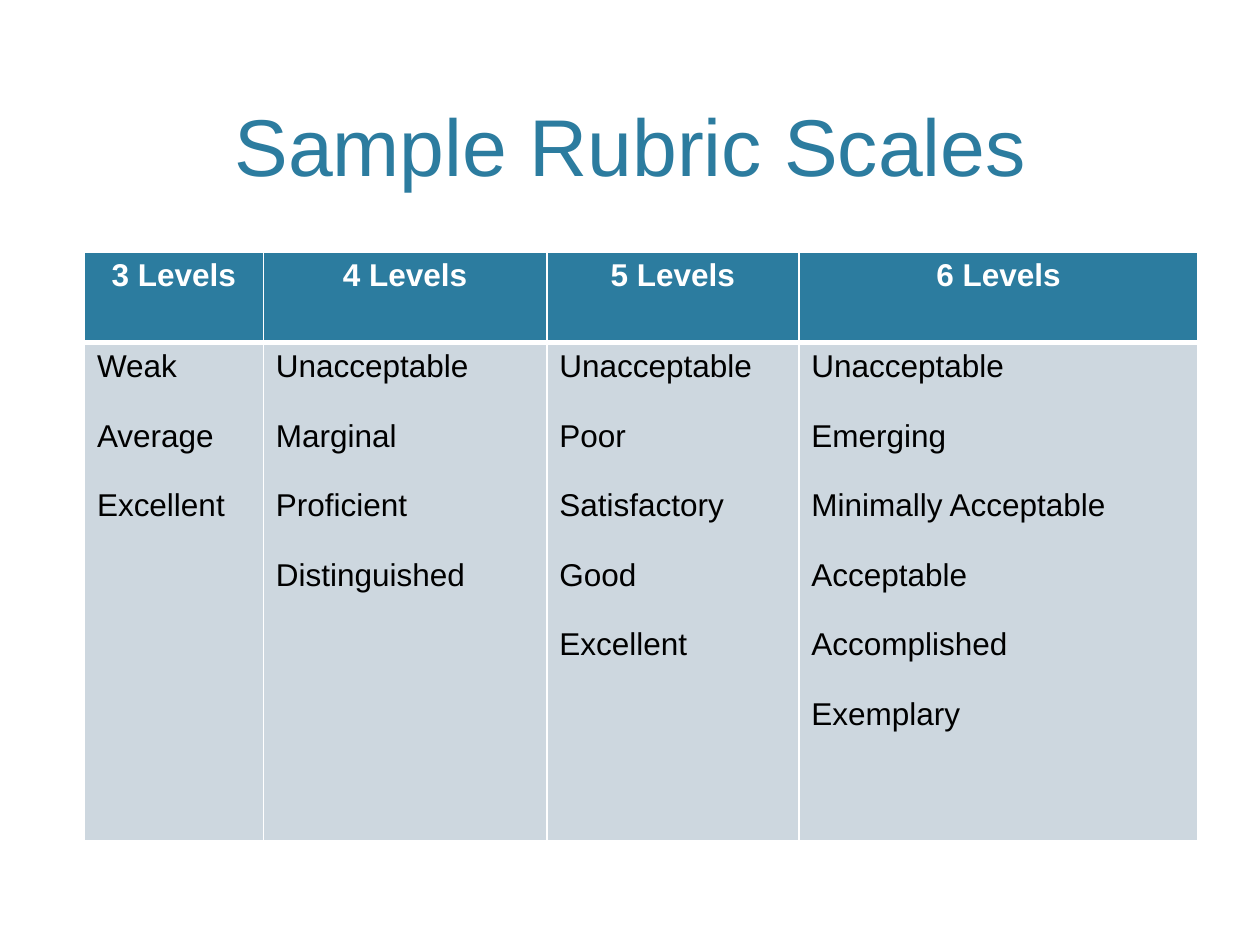
from lxml import etree
from pptx import Presentation
from pptx.dml.color import RGBColor
from pptx.enum.text import MSO_ANCHOR, PP_ALIGN
from pptx.oxml.ns import qn
from pptx.util import Inches, Pt

CENTER, LEFT = PP_ALIGN.CENTER, PP_ALIGN.LEFT
BOTTOM = MSO_ANCHOR.BOTTOM
TITLE_ONLY = 5

BLUE, PALE, WHITE, BLACK = "2C7C9F", "CDD7DF", "FFFFFF", "000000"
TITLE_FORMAT = {"size": Pt(46), "bold": False}
HEADER_FORMAT = {"size": Pt(18), "bold": True}
LEVEL_FORMAT = {"size": Pt(18), "bold": False}
LEVEL_GAP = Pt(19.6)

SCALES = {
    "3 Levels": ["Weak", "Average", "Excellent"],
    "4 Levels": ["Unacceptable", "Marginal", "Proficient", "Distinguished"],
    "5 Levels": ["Unacceptable", "Poor", "Satisfactory", "Good", "Excellent"],
    "6 Levels": ["Unacceptable", "Emerging", "Minimally Acceptable",
                 "Acceptable", "Accomplished", "Exemplary"],
}
COLUMN_WIDTHS = [1.42, 2.25, 2, 3.17]
ROW_HEIGHTS = [0.72, 3.95]


def color(value):
    return RGBColor.from_string(value)


class SlideBuilder:
    """Holds the style and the current slide."""

    def __init__(self, presentation, font="Arial"):
        self.font = font
        self.width = presentation.slide_width
        self.height = presentation.slide_height
        self.slide = presentation.slides.add_slide(
            presentation.slide_layouts[TITLE_ONLY])

    def box(self, left, top, width, height):
        """Turn shares of the slide into lengths."""
        return (int(left * self.width), int(top * self.height),
                int(width * self.width), int(height * self.height))

    def add_lines(self, frame, lines, text_color, text_format, alignment, gap=0):
        for index, line in enumerate(lines):
            paragraph = frame.paragraphs[0] if index == 0 else frame.add_paragraph()
            paragraph.alignment = alignment
            paragraph.space_before = Pt(0)
            paragraph.space_after = gap
            run = paragraph.add_run()
            run.text = line
            run.font.name = self.font
            run.font.color.rgb = color(text_color)
            for name, value in text_format.items():
                setattr(run.font, name, value)

    def title(self, text, *shares):
        shape = self.slide.shapes.title
        shape.left, shape.top, shape.width, shape.height = self.box(*shares)
        shape.text_frame.vertical_anchor = BOTTOM
        self.add_lines(shape.text_frame, [text], BLUE, TITLE_FORMAT, CENTER)

    def borders(self, cell, widths):
        properties = cell._tc.get_or_add_tcPr()
        for side, width in widths.items():
            line = etree.SubElement(properties, qn(f"a:ln{side}"), w=str(Pt(width)))
            fill = etree.SubElement(line, qn("a:solidFill"))
            etree.SubElement(fill, qn("a:srgbClr"), val=WHITE)

    def cell(self, cell, fill, widths, *text):
        self.borders(cell, widths)
        cell.fill.solid()
        cell.fill.fore_color.rgb = color(fill)
        self.add_lines(cell.text_frame, *text)

    def table(self, scales, column_widths, row_heights, *shares):
        table = self.slide.shapes.add_table(
            len(row_heights), len(scales), *self.box(*shares)).table
        for column, width in zip(table.columns, column_widths):
            column.width = Inches(width)
        for row, height in zip(table.rows, row_heights):
            row.height = Inches(height)
        for index, (header, levels) in enumerate(scales.items()):
            self.cell(table.cell(0, index), BLUE, {"L": 1, "R": 1, "T": 1, "B": 3},
                      [header], WHITE, HEADER_FORMAT, CENTER)
            self.cell(table.cell(1, index), PALE, {"L": 1, "R": 1, "T": 3, "B": 1},
                      levels, BLACK, LEVEL_FORMAT, LEFT, LEVEL_GAP)


def main():
    presentation = Presentation()
    presentation.slide_width, presentation.slide_height = Inches(10), Inches(7.5)
    builder = SlideBuilder(presentation)

    # Title
    builder.title("Sample Rubric Scales", 0.06, 0.12 / 7.5, 0.88, 1.46 / 7.5)

    # Rubric scales, one column each
    builder.table(SCALES, COLUMN_WIDTHS, ROW_HEIGHTS,
                  0.67 / 10, 2 / 7.5, 8.83 / 10, 4.67 / 7.5)

    presentation.save("out.pptx")


if __name__ == "__main__":
    main()
